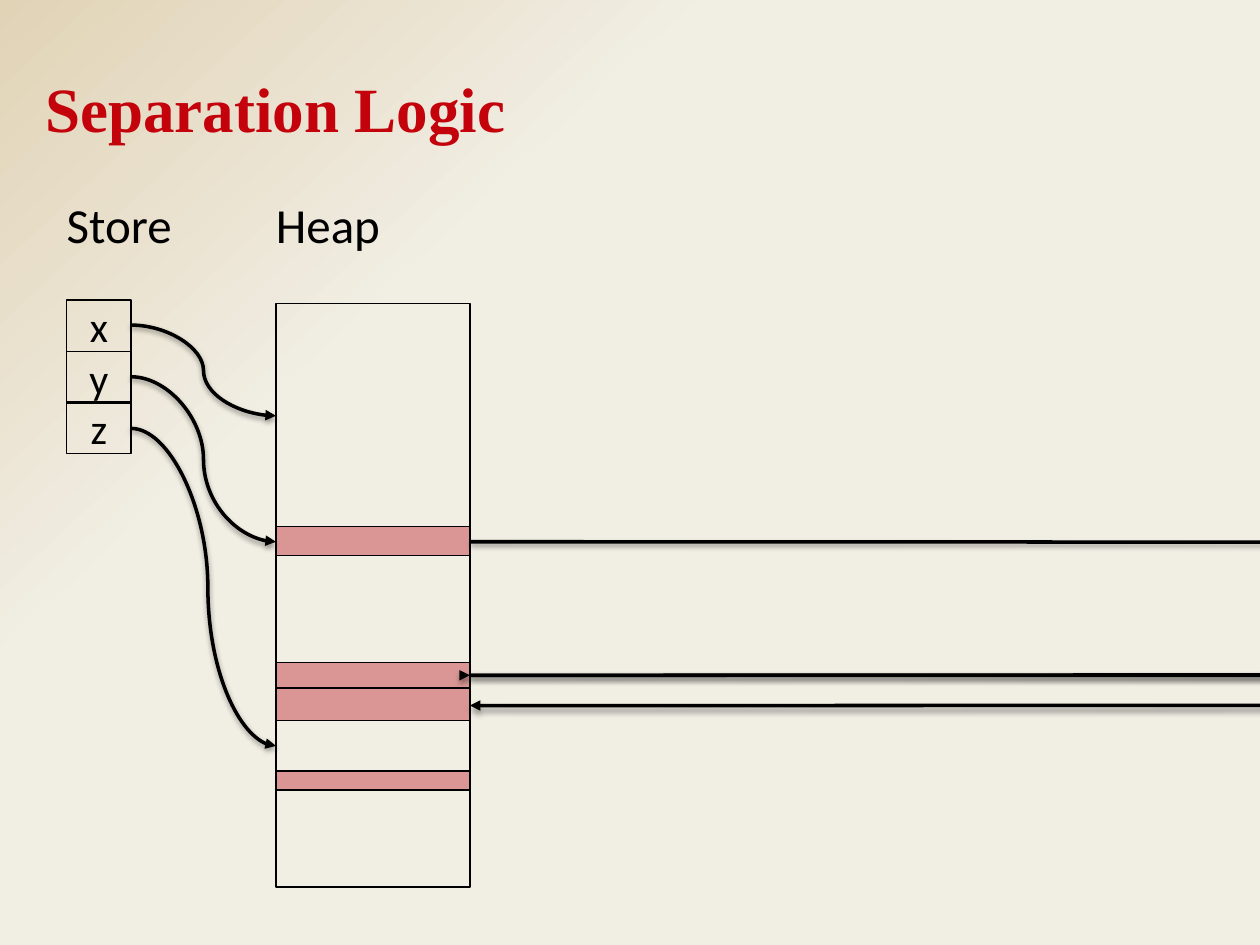
from itertools import pairwise
from lxml import etree
from pptx import Presentation
from pptx.dml.color import RGBColor
from pptx.enum.shapes import MSO_CONNECTOR, MSO_SHAPE
from pptx.enum.text import MSO_ANCHOR, PP_ALIGN
from pptx.oxml.ns import qn
from pptx.util import Inches, Pt

COLORS = {
    "sand": "E1D3B6",
    "cream": "F1EEE4",
    "title": "C3020B",
    "ink": "000000",
    "cell": "D99694",
}


def rgb(name):
    return RGBColor.from_string(COLORS[name])


def write(frame, text, size, font="Calibri", color="ink", bold=False,
          align=PP_ALIGN.LEFT, anchor=MSO_ANCHOR.TOP, inset=None):
    frame.word_wrap = True
    frame.vertical_anchor = anchor
    if inset is not None:
        frame.margin_left = frame.margin_right = inset
        frame.margin_top = frame.margin_bottom = inset
    paragraph = frame.paragraphs[0]
    paragraph.alignment = align
    run = paragraph.add_run()
    run.text = text
    run.font.size = Pt(size)
    run.font.name = font
    run.font.bold = bold
    run.font.color.rgb = rgb(color)


prs = Presentation()
prs.slide_width = Inches(10)
prs.slide_height = Inches(7.5)
slide = prs.slides.add_slide(prs.slide_layouts[6])
shapes = slide.shapes

backdrop = slide.background.fill
backdrop.gradient()
backdrop.gradient_angle = 313
for stop, position, name in zip(backdrop.gradient_stops, (0, 0.32), ("sand", "cream")):
    stop.position = position
    stop.color.rgb = rgb(name)
sand = next(slide.background._cSld.iter(qn("a:srgbClr")))
etree.SubElement(sand, qn("a:alpha"), val="80000")

store_left, store_width = 0.53, 0.51
heap_left, heap_width = 2.19, 1.54
store_right = store_left + store_width
heap_right = heap_left + heap_width

headings = [
    ("Separation Logic", 0.36, 0.55, 7.81, 0.94,
     dict(size=36, font="Times New Roman", color="title", bold=True)),
    ("Heap", heap_left, 1.54, 1.54, 0.56, dict(size=28)),
    ("Store", store_left, 1.54, 1.54, 0.56, dict(size=28)),
]
for text, left, top, width, height, style in headings:
    heading = shapes.add_textbox(Inches(left), Inches(top), Inches(width), Inches(height))
    write(heading.text_frame, text, inset=0, **style)

heap_edges = [2.41, 4.18, 4.41, 5.26, 5.46, 5.72, 6.12, 6.27, 7.04]
heap_used = [False, True, False, True, True, False, True, False]
cells = [(heap_left, top, heap_width, bottom - top, used, None)
         for (top, bottom), used in zip(pairwise(heap_edges), heap_used)]
store_tops = [2.38, 2.79, 3.19]
cells += [(store_left, top, store_width, 0.41, False, variable)
          for top, variable in zip(store_tops, "xyz")]

for left, top, width, height, used, variable in cells:
    cell = shapes.add_shape(MSO_SHAPE.RECTANGLE, Inches(left), Inches(top),
                            Inches(width), Inches(height))
    cell.shadow.inherit = False
    cell.line.color.rgb = rgb("ink")
    cell.line.width = Pt(0.75)
    if used:
        cell.fill.solid()
        cell.fill.fore_color.rgb = rgb("cell")
    else:
        cell.fill.background()
    if variable:
        write(cell.text_frame, variable, 24, align=PP_ALIGN.CENTER, anchor=MSO_ANCHOR.MIDDLE)

store_x, heap_x, loop_x = Inches(store_right), Inches(heap_left), Inches(heap_right)
loop_bulge = Inches(0.25)
pointers = [
    (store_x, 2.58, heap_x, 3.3, 0.5),
    (store_x, 2.99, heap_x, 4.3, 0.5),
    (store_x, 3.4, heap_x, 5.92, 0.53),
    (loop_x + 3, 4.3, loop_x, 5.36, -loop_bulge / 3),
    (loop_x + 4, 5.36, loop_x, 5.6, -loop_bulge / 4),
]
for start_x, start_y, end_x, end_y, bend in pointers:
    pointer = shapes.add_connector(MSO_CONNECTOR.CURVE, start_x, Inches(start_y),
                                   end_x, Inches(end_y))
    pointer.line.color.rgb = rgb("ink")
    pointer.line.width = Pt(2)
    etree.SubElement(pointer.line._get_or_add_ln(), qn("a:tailEnd"), type="triangle")
    properties = pointer._element.spPr
    guides = next(properties.iter(qn("a:avLst")))
    etree.SubElement(guides, qn("a:gd"), name="adj1", fmla=f"val {round(bend * 100000)}")
    effects = etree.SubElement(properties, qn("a:effectLst"))
    shadow = etree.SubElement(effects, qn("a:outerShdw"), blurRad="40000", dist="20000",
                              dir="5400000", rotWithShape="0")
    shade = etree.SubElement(shadow, qn("a:srgbClr"), val=COLORS["ink"])
    etree.SubElement(shade, qn("a:alpha"), val="38000")

prs.save("out.pptx")
